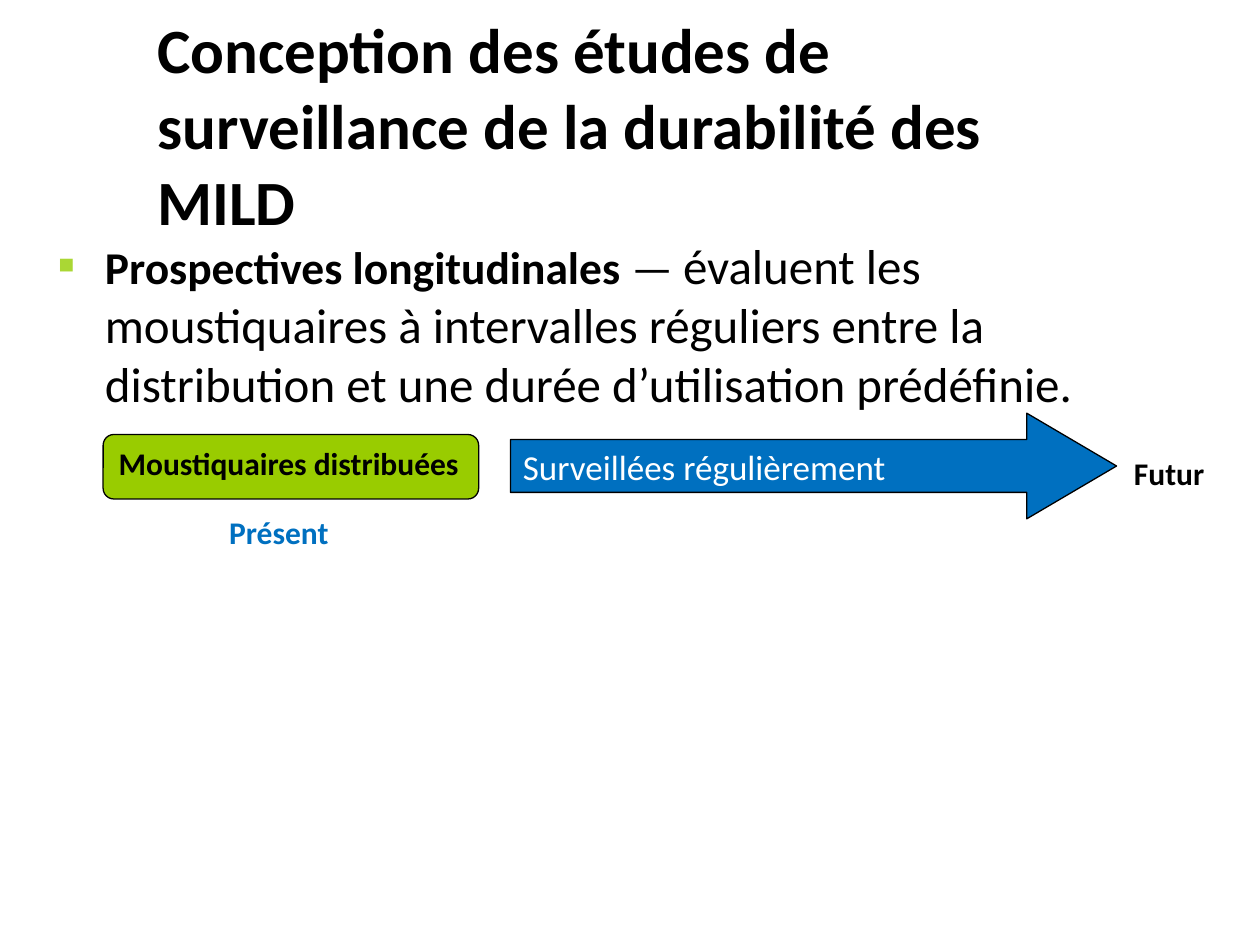
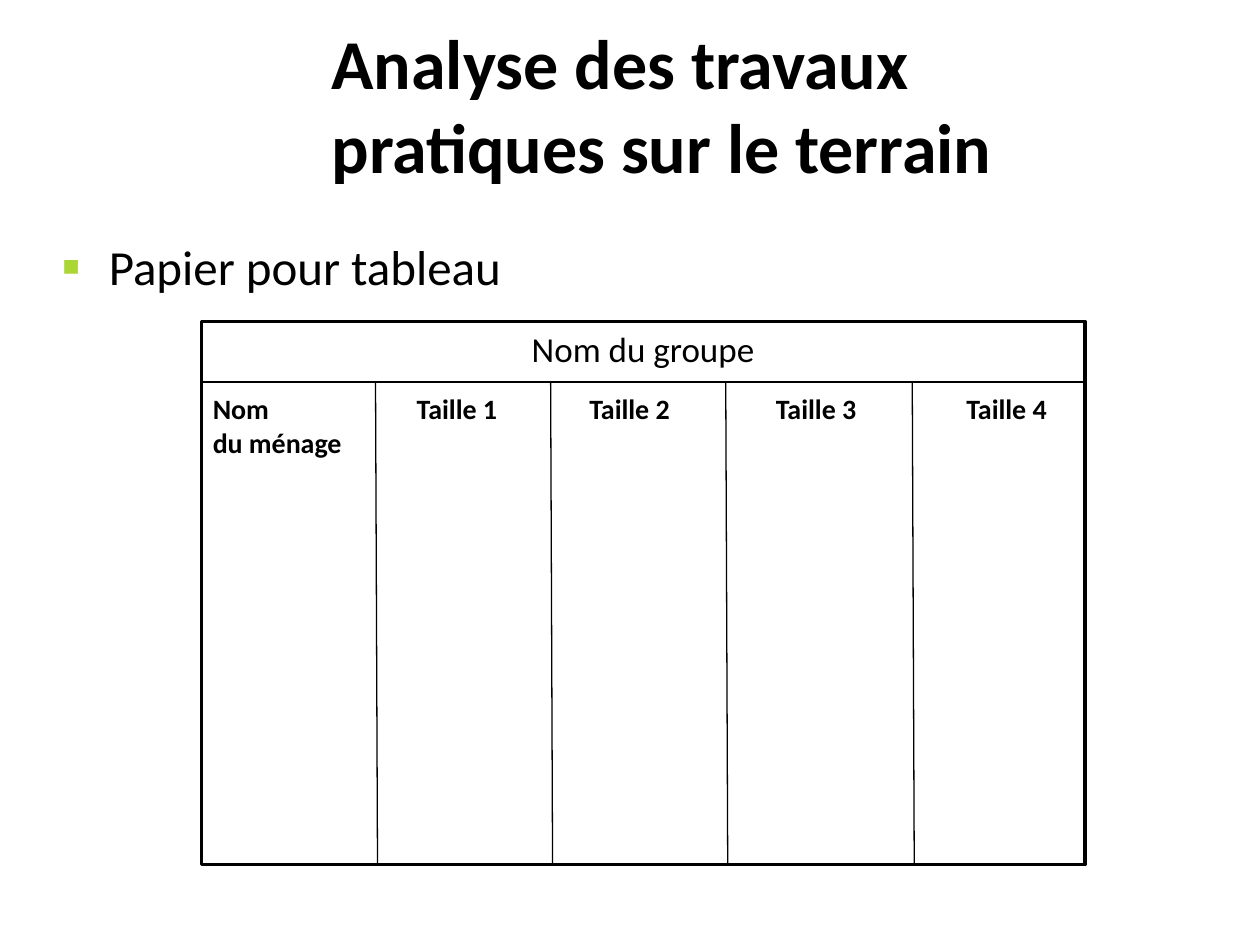
from dataclasses import dataclass
from typing import NamedTuple

from lxml import etree
from pptx import Presentation
from pptx import util as u
from pptx.dml.color import RGBColor
from pptx.enum import shapes, text
from pptx.oxml import ns


@dataclass(frozen=True)
class Theme:
    font: str = "Calibri"
    spacer_font: str = "Cambria"
    black: str = "000000"
    white: str = "FFFFFF"
    blue: str = "0070C0"
    green: str = "99CC00"
    bullet: str = "AAD734"
    title: int = 36
    large_title: int = 40
    body: int = 28
    term: int = 26
    spacer: int = 24
    caption: int = 20
    label: int = 18
    column: int = 16
    thin: float = 0.75
    thick: float = 2


THEME = Theme()


class Area(NamedTuple):
    """A rectangle in centimetres."""
    left: float
    top: float
    width: float
    height: float


class Span(NamedTuple):
    words: str
    size: int
    bold: bool = False
    color: str = THEME.black
    font: str = THEME.font


class Line(NamedTuple):
    spans: list[Span]
    align: text.PP_ALIGN = text.PP_ALIGN.LEFT


class Panel(NamedTuple):
    kind: shapes.MSO_SHAPE
    area: Area
    fill: str
    line: Line
    border: float = THEME.thin
    adjustments: tuple[float, ...] = ()


class Label(NamedTuple):
    area: Area
    lines: list[Line]


def place(shape, area: Area) -> None:
    for name, value in area._asdict().items():
        setattr(shape, name, u.Cm(value))


def write(frame, lines: list[Line], **frame_format) -> None:
    frame_format = {"auto_size": text.MSO_AUTO_SIZE.NONE, "word_wrap": True,
                    "vertical_anchor": text.MSO_ANCHOR.TOP} | frame_format
    for name, value in frame_format.items():
        setattr(frame, name, value)
    for index, line in enumerate(lines):
        para = frame.add_paragraph() if index else frame.paragraphs[0]
        para.alignment = line.align
        for span in line.spans:
            run = para.add_run()
            run.text = span.words
            run_format = {"name": span.font, "size": u.Pt(span.size), "bold": span.bold}
            for name, value in run_format.items():
                setattr(run.font, name, value)
            run.font.color.rgb = RGBColor.from_string(span.color)


def add_bullet(para) -> None:
    props = para._p.get_or_add_pPr()
    props.set("marL", str(u.Cm(0.95)))
    props.set("indent", str(-u.Cm(0.95)))
    color = etree.SubElement(props, ns.qn("a:buClr"))
    etree.SubElement(color, ns.qn("a:srgbClr"), val=THEME.bullet)
    etree.SubElement(props, ns.qn("a:buSzPct"), val="110000")
    etree.SubElement(props, ns.qn("a:buFont"), typeface=THEME.font)
    etree.SubElement(props, ns.qn("a:buChar"), char="▪")
    para.space_before = u.Pt(0)
    para.space_after = u.Pt(6)


def add_page(deck, title: Span, title_area: Area, item: list[Span], body_area: Area):
    page = deck.slides.add_slide(deck.slide_layouts.get_by_name("Title and Content"))
    heading, body = page.shapes.title, page.placeholders[1]
    place(heading, title_area)
    write(heading.text_frame, [Line([title])], vertical_anchor=text.MSO_ANCHOR.MIDDLE)
    place(body, body_area)
    write(body.text_frame, [Line(item)])
    add_bullet(body.text_frame.paragraphs[0])
    return page


def add_panel(page, panel: Panel) -> None:
    shape = page.shapes.add_shape(panel.kind, *map(u.Cm, panel.area))
    shape.shadow.inherit = False
    for index, value in enumerate(panel.adjustments):
        shape.adjustments[index] = value
    shape.fill.solid()
    shape.fill.fore_color.rgb = RGBColor.from_string(panel.fill)
    shape.line.color.rgb = RGBColor.from_string(THEME.black)
    shape.line.width = u.Pt(panel.border)
    write(shape.text_frame, [panel.line])


def add_label(page, label: Label) -> None:
    box = page.shapes.add_textbox(*map(u.Cm, label.area))
    write(box.text_frame, label.lines, word_wrap=False,
          auto_size=text.MSO_AUTO_SIZE.SHAPE_TO_FIT_TEXT)


def add_rule(page, *ends: float) -> None:
    """Draw a thin line through x1, y1, x2, y2 in centimetres."""
    rule = page.shapes.add_connector(shapes.MSO_CONNECTOR.STRAIGHT, *map(u.Cm, ends))
    rule.line.color.rgb = RGBColor.from_string(THEME.black)
    rule.line.width = u.Pt(THEME.thin)
    etree.SubElement(rule._element.spPr, ns.qn("a:effectLst"))


def build_study_design(deck) -> None:
    page = add_page(
        deck,
        Span("Conception des études de surveillance de la durabilité des MILD",
             THEME.title, True),
        Area(2.92, 1.12, 18.9, 2.77),
        [Span("Prospectives longitudinales ", THEME.term, True),
         Span("— ", THEME.term),
         Span("évaluent les moustiquaires à intervalles réguliers entre la "
              "distribution et une durée d’utilisation prédéfinie.", THEME.body)],
        Area(0.91, 4.62, 23.75, 14.43))
    panels = [
        Panel(shapes.MSO_SHAPE.ROUNDED_RECTANGLE, Area(2.08, 8.76, 7.57, 1.3), THEME.green,
              Line([Span("Moustiquaires distribuées", THEME.label, True)])),
        Panel(shapes.MSO_SHAPE.RIGHT_ARROW, Area(10.29, 8.33, 12.22, 2.13), THEME.blue,
              Line([Span("Surveillées régulièrement", THEME.caption, color=THEME.white)]),
              adjustments=(0.5, 0.85)),
    ]
    for panel in panels:
        add_panel(page, panel)
    present = [Span("Présent", THEME.label, True, THEME.blue),
               Span(" ", THEME.spacer, font=THEME.spacer_font)]
    future = [Span("Futur", THEME.label, True)]
    add_label(page, Label(Area(4.37, 10.01, 3.05, 1.02), [Line(present)]))
    add_label(page, Label(Area(22.61, 9.02, 2.69, 1.02), [Line(future)]))


def build_field_analysis(deck) -> None:
    page = add_page(
        deck,
        Span("Analyse des travaux pratiques sur le terrain", THEME.large_title, True),
        Area(6.43, 0.71, 14.94, 2.77),
        [Span("Papier pour tableau", THEME.body)],
        Area(0.99, 4.65, 23.34, 13.13))
    sheet = Area(4.06, 6.48, 17.81, 10.95)
    add_panel(page, Panel(
        shapes.MSO_SHAPE.RECTANGLE, sheet, THEME.white,
        Line([Span("Nom du groupe", THEME.caption)], text.PP_ALIGN.CENTER), THEME.thick))

    header_bottom, slant = 7.7, 0.04
    add_rule(page, sheet.left, header_bottom, sheet.left + sheet.width, header_bottom)
    for x in (7.57, 11.1, 14.63, 18.39):
        add_rule(page, x, header_bottom, x + slant, sheet.top + sheet.height)

    label_top = 7.77
    for number, left in enumerate((8.15, 11.63, 15.39, 19.23), start=1):
        size_name = Span(f"Taille {number}", THEME.column, True)
        add_label(page, Label(Area(left, label_top, 2.13, 0.94), [Line([size_name])]))
    add_label(page, Label(Area(4.04, label_top, 3.45, 1.63), [
        Line([Span("Nom", THEME.column, True)]),
        Line([Span("du ménage", THEME.column, True)], text.PP_ALIGN.CENTER)]))


def main() -> None:
    deck = Presentation()
    deck.slide_width, deck.slide_height = u.Cm(25.4), u.Cm(19.05)
    build_study_design(deck)
    build_field_analysis(deck)
    deck.save("out.pptx")


if __name__ == "__main__":
    main()
